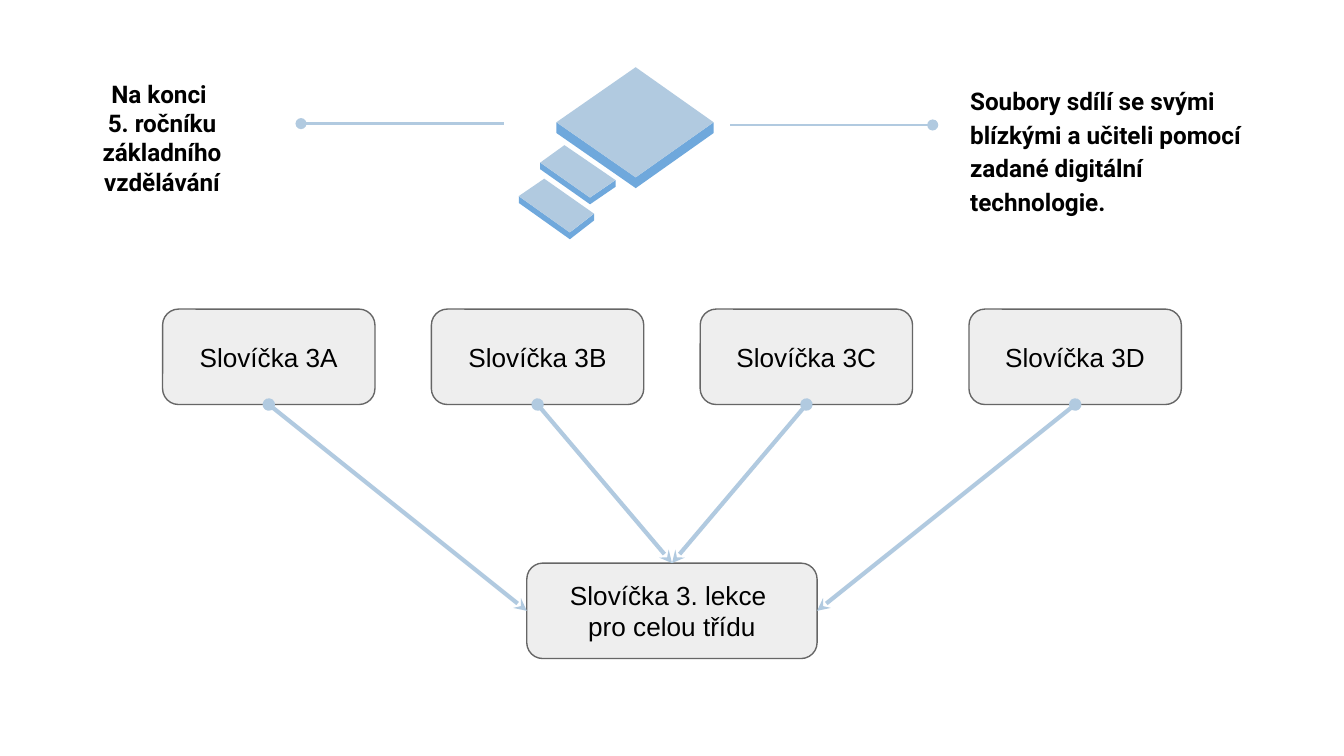
"""Build the slide on sharing vocabulary files between pupils."""
from dataclasses import dataclass

import pptx
import pptx.dml.color
import pptx.enum.shapes
import pptx.enum.text
import pptx.oxml
import pptx.oxml.ns
import pptx.util
from pptx.util import Inches

COLOURS = {
    "pale": "B1CAE0",
    "edge": "6FA8DC",
    "box": "EEEEEE",
    "outline": "666666",
    "text": "000000",
}
TOP, LEFT, BOTTOM, RIGHT = range(4)
Point = tuple[float, float]
Align = pptx.enum.text.PP_ALIGN
Anchor = pptx.enum.text.MSO_ANCHOR


@dataclass
class Area:
    left: float
    top: float
    width: float
    height: float

    def lengths(self) -> list[pptx.util.Length]:
        return [Inches(n) for n in (self.left, self.top, self.width, self.height)]


@dataclass
class Slab:
    top: Point
    left: Point
    bottom: Point
    right: Point
    depth: float


def colour(name: str) -> pptx.dml.color.RGBColor:
    return pptx.dml.color.RGBColor.from_string(COLOURS[name])


def write(shape, lines: list[str], font: str, size: float, bold: bool = False,
          align=Align.CENTER, anchor=Anchor.MIDDLE, spacing: float = 1.0) -> None:
    frame = shape.text_frame
    frame.word_wrap = True
    frame.vertical_anchor = anchor
    frame.margin_left = frame.margin_right = Inches(0.1)
    frame.margin_top = frame.margin_bottom = Inches(0.1)
    frame.text = "\n".join(lines)
    for para in frame.paragraphs:
        para.alignment = align
        para.line_spacing = spacing
        para.font.name = font
        para.font.size = pptx.util.Pt(size)
        para.font.bold = bold
        para.font.color.rgb = colour("text")


def add_box(page, area: Area, lines: list[str]):
    box = page.shapes.add_shape(
        pptx.enum.shapes.MSO_SHAPE.ROUNDED_RECTANGLE, *area.lengths())
    box.shadow.inherit = False
    box.fill.solid()
    box.fill.fore_color.rgb = colour("box")
    box.line.color.rgb = colour("outline")
    box.line.width = pptx.util.Pt(0.75)
    write(box, lines, "Arial", 14)
    return box


def add_line(page, start: Point, end: Point, width: float, tail: str = "none"):
    line = page.shapes.add_connector(
        pptx.enum.shapes.MSO_CONNECTOR.STRAIGHT,
        *(Inches(n) for n in (*start, *end)))
    line.line.color.rgb = colour("pale")
    line.line.width = pptx.util.Pt(width)
    properties = line.element.spPr
    stroke = properties.find(pptx.oxml.ns.qn("a:ln"))
    for tag, kind in (("a:headEnd", "oval"), ("a:tailEnd", tail)):
        end_mark = pptx.oxml.parse_xml(f"<{tag} {pptx.oxml.ns.nsdecls('a')}/>")
        end_mark.set("type", kind)
        stroke.append(end_mark)
    properties.append(
        pptx.oxml.parse_xml(f"<a:effectLst {pptx.oxml.ns.nsdecls('a')}/>"))
    return line


def add_face(shapes, points: list[Point], fill: str) -> None:
    corners = [(Inches(x), Inches(y)) for x, y in points]
    builder = shapes.build_freeform(*corners[0])
    builder.add_line_segments(corners[1:], close=True)
    face = builder.convert_to_shape()
    face.shadow.inherit = False
    face.fill.solid()
    face.fill.fore_color.rgb = colour(fill)
    face.line.fill.background()


def add_slab(shapes, slab: Slab) -> None:
    def lowered(point: Point) -> Point:
        return point[0], point[1] + slab.depth

    for side in (slab.right, slab.left):
        add_face(shapes, [side, lowered(side), lowered(slab.bottom), slab.bottom], "edge")
    add_face(shapes, [slab.top, slab.left, slab.bottom, slab.right], "pale")


def main() -> None:
    deck = pptx.Presentation()
    deck.slide_width = Inches(10)
    deck.slide_height = deck.slide_width * 9 // 16
    page = deck.slides.add_slide(deck.slide_layouts[6])

    stage = page.shapes.add_textbox(*Area(0.45, 0.71, 1.51, 0.63).lengths())
    write(stage, ["Na konci ", "5. ročníku základního vzdělávání"], "Roboto", 13, bold=True)
    goal = page.shapes.add_textbox(*Area(7.12, 0.51, 2.51, 0.83).lengths())
    write(goal, ["Soubory sdílí se svými blízkými a učiteli pomocí zadané digitální technologie."],
          "Roboto", 13, bold=True, align=Align.LEFT, anchor=Anchor.TOP, spacing=1.15)
    add_line(page, (2.24, 0.92), (3.75, 0.92), 1.5)
    add_line(page, (6.94, 0.93), (5.43, 0.93), 1.5)

    emblem = page.shapes.add_group_shape()
    for slab in (
        Slab((4.05, 1.33), (3.86, 1.46), (4.24, 1.73), (4.42, 1.59), 0.05),
        Slab((4.2, 1.08), (4.02, 1.21), (4.39, 1.47), (4.58, 1.34), 0.05),
        Slab((4.73, 0.5), (4.14, 0.91), (4.73, 1.32), (5.31, 0.91), 0.08),
    ):
        add_slab(emblem.shapes, slab)

    lesson = add_box(page, Area(3.92, 4.19, 2.16, 0.71),
                     ["Slovíčka 3. lekce ", "pro celou třídu"])
    for index, (letter, site) in enumerate(zip("ABCD", (LEFT, TOP, TOP, RIGHT))):
        part = add_box(page, Area(1.21 + 2 * index, 2.3, 1.58, 0.71), [f"Slovíčka 3{letter}"])
        arrow = add_line(page, (2 + 2 * index, 3.01), (5, 4.19), 2.25, tail="stealth")
        arrow.begin_connect(part, BOTTOM)
        arrow.end_connect(lesson, site)

    deck.save("out.pptx")


if __name__ == "__main__":
    main()
